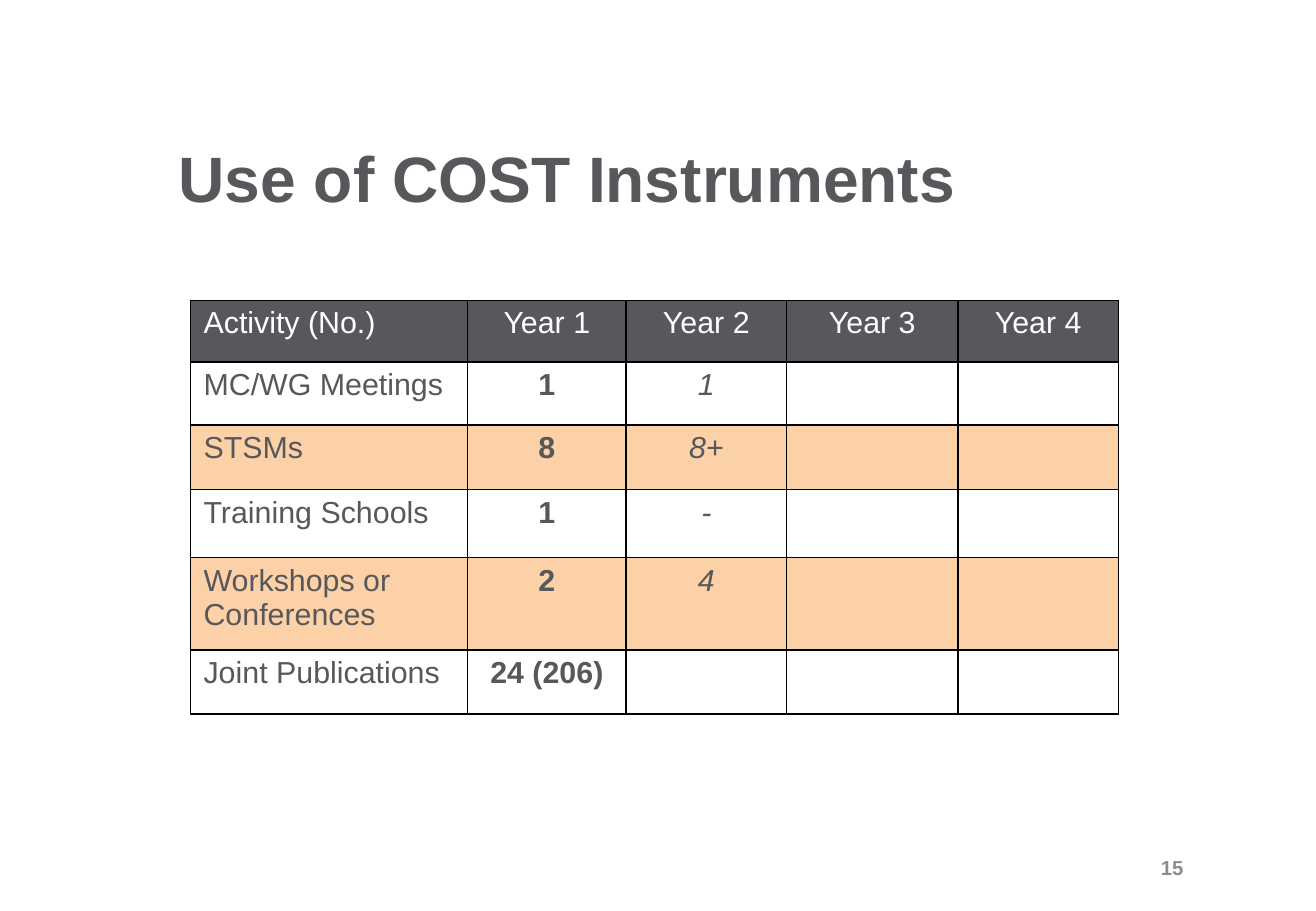
from dataclasses import dataclass

from lxml.etree import SubElement
from pptx import Presentation
from pptx.dml.color import RGBColor as RGB
from pptx.enum.text import MSO_ANCHOR as ANCHOR, PP_ALIGN as ALIGN
from pptx.oxml.ns import qn
from pptx.util import Pt

# Content
TITLE = "Use of COST Instruments"
PAGE = "15"
ROWS = [
    ("Activity (No.)", "Year 1", "Year 2", "Year 3", "Year 4"),
    ("MC/WG Meetings", "1", "1", "", ""),
    ("STSMs", "8", "8+", "", ""),
    ("Training Schools", "1", "-", "", ""),
    ("Workshops or Conferences", "2", "4", "", ""),
    ("Joint Publications", "24 (206)", "", "", ""),
]

# Places in points
TITLE_BOX = (98.6, 78.2, 602.6, 67)
PAGE_BOX = (659.5, 499.7, 49, 28.8)
TABLE_AT = (113, 178)
COL_WIDTHS = (164.2, 93.9, 95.2, 101.5, 95.2)
ROW_HEIGHTS = (36.7, 37.2, 38.4, 40.3, 54.7, 38)
CELL_INSETS = (7.7, 3.6)


@dataclass(frozen=True)
class Theme:
    font: str = "Arial"
    gray: str = "56585B"
    light_gray: str = "8C8C8C"
    white: str = "FFFFFF"
    peach: str = "FDD1A7"
    border: str = "000000"
    border_width: float = 1
    title_size: float = 38
    table_size: float = 18
    page_size: float = 12


T = Theme()


def style(p, size, color, bold=False, italic=False, align=ALIGN.LEFT):
    p.alignment = align
    p.space_before = Pt(0)
    for font in (p.font, *(r.font for r in p.runs)):
        font.name, font.size = T.font, Pt(size)
        font.bold, font.italic = bold, italic
        font.color.rgb = RGB.from_string(color)


def add_borders(cell):
    tc_pr = cell._tc.get_or_add_tcPr()
    for side in ("a:lnL", "a:lnR", "a:lnT", "a:lnB"):
        ln = SubElement(tc_pr, qn(side), w=str(Pt(T.border_width)))
        fill = SubElement(ln, qn("a:solidFill"))
        SubElement(fill, qn("a:srgbClr"), val=T.border)


def fill_color(row):
    if row == 0:
        return T.gray
    return T.white if row % 2 else T.peach


prs = Presentation()
prs.slide_width, prs.slide_height = Pt(780), Pt(540)
s = prs.slides.add_slide(prs.slide_layouts[5])

# Title
sp = s.shapes.title
sp.left, sp.top, sp.width, sp.height = map(Pt, TITLE_BOX)
tf = sp.text_frame
tf.text = TITLE
tf.vertical_anchor = ANCHOR.TOP
style(tf.paragraphs[0], T.title_size, T.gray, bold=True)

# Table of activities by year
size = (sum(COL_WIDTHS), sum(ROW_HEIGHTS))
table = s.shapes.add_table(len(ROWS), len(COL_WIDTHS),
                           *map(Pt, TABLE_AT + size)).table
table.horz_banding = False
table.first_row = False
for column, width in zip(table.columns, COL_WIDTHS):
    column.width = Pt(width)
for i, (row, height) in enumerate(zip(ROWS, ROW_HEIGHTS)):
    table.rows[i].height = Pt(height)
    for j, text in enumerate(row):
        cell = table.cell(i, j)
        cell.text = text
        cell.margin_left = cell.margin_right = Pt(CELL_INSETS[0])
        cell.margin_top = cell.margin_bottom = Pt(CELL_INSETS[1])
        add_borders(cell)
        cell.fill.solid()
        cell.fill.fore_color.rgb = RGB.from_string(fill_color(i))
        style(cell.text_frame.paragraphs[0], T.table_size,
              T.gray if i else T.white,
              bold=i > 0 and j == 1, italic=i > 0 and j == 2,
              align=ALIGN.CENTER if j else ALIGN.LEFT)

# Page number
tf = s.shapes.add_textbox(*map(Pt, PAGE_BOX)).text_frame
tf.word_wrap = True
tf.vertical_anchor = ANCHOR.MIDDLE
tf.text = PAGE
style(tf.paragraphs[0], T.page_size, T.light_gray, bold=True, align=ALIGN.RIGHT)

prs.save("out.pptx")
